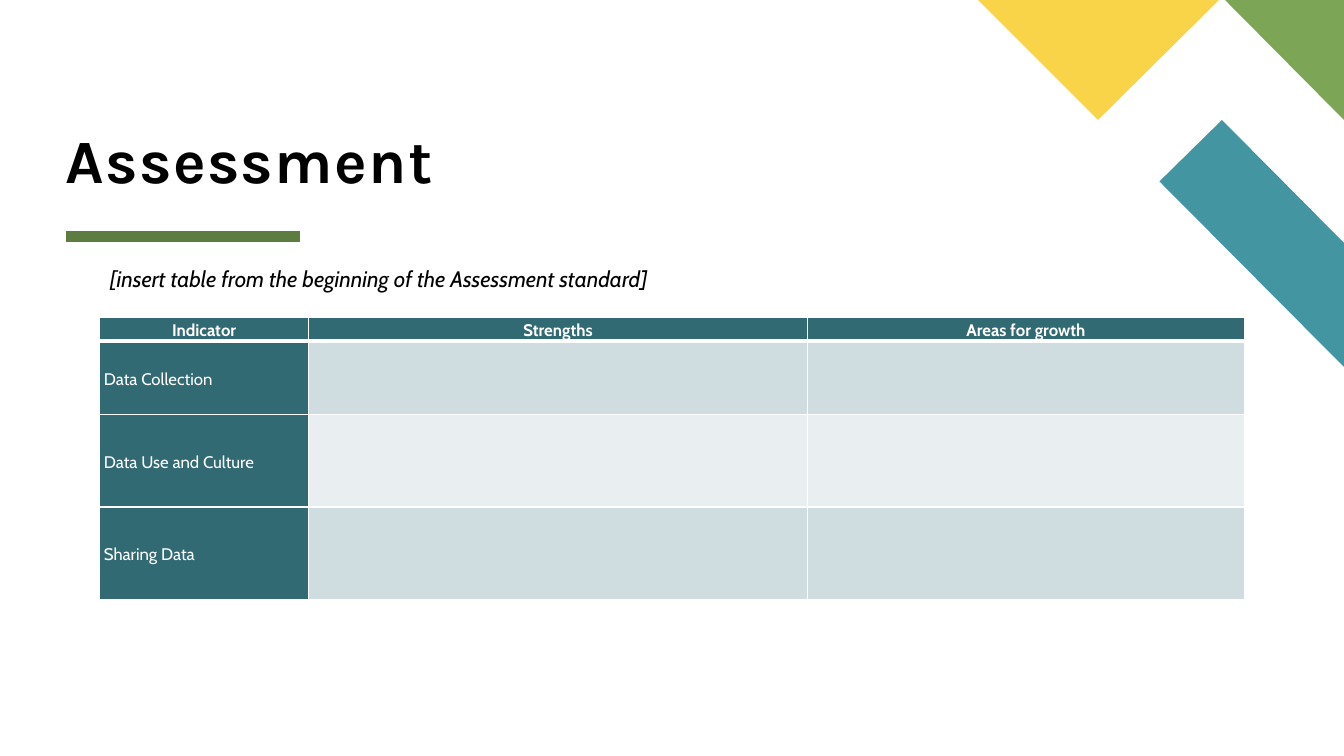
from dataclasses import dataclass

from lxml.etree import SubElement
from pptx import Presentation
from pptx.dml.color import RGBColor
from pptx.enum.shapes import MSO_CONNECTOR
from pptx.enum.text import MSO_ANCHOR, PP_ALIGN
from pptx.oxml.ns import qn
from pptx.util import Inches, Pt

COLORS = {
    "teal": "4495A2", "green": "7CA655", "yellow": "F9D448", "rule": "5D7D40",
    "head": "316A73", "odd": "CFDDE0", "even": "E9EFF0",
    "white": "FFFFFF", "black": "000000",
}


@dataclass
class Patch:
    color: str
    points: list[tuple[float, float]]


@dataclass
class Label:
    text: str
    box: tuple[float, float, float, float]
    insets: tuple[float, float, float, float]
    font: str
    size: int
    anchor: MSO_ANCHOR
    bold: bool = False
    italic: bool = False
    line: float = 1.0
    before: int = 0
    track: int = 0


PATCHES = [
    Patch("teal", [(13.33, 3.64), (13.33, 2.41), (12.12, 1.19), (11.5, 1.8)]),
    Patch("green", [(13.33, 1.19), (13.33, 0), (12.15, 0)]),
    Patch("yellow", [(9.7, 0), (10.89, 1.19), (12.09, 0)]),
]
LABELS = [
    Label("Assessment", (0.65, 0.22, 12, 1.72), (0, 0, 0, 0), "Karla", 44,
          MSO_ANCHOR.BOTTOM, bold=True, line=0.8, track=100),
    Label("[insert table from the beginning of the Assessment standard]",
          (0.65, 2.58, 12, 0.85), (0.44, 0.05, 0.1, 0.05), "Cabin", 16,
          MSO_ANCHOR.TOP, italic=True, before=6),
]
HEADS = ["Indicator", "Strengths", "Areas for growth"]
TOPICS = ["Data Collection", "Data Use and Culture", "Sharing Data"]
COLS = [2.07, 4.95, 4.33]
ROWS = [0.2, 0.73, 0.92, 0.92]


def rgb(name: str) -> RGBColor:
    return RGBColor.from_string(COLORS[name])


def draw_patch(shapes, patch: Patch) -> None:
    points = [(Inches(x), Inches(y)) for x, y in patch.points]
    form = shapes.build_freeform(*points[0])
    form.add_line_segments(points[1:], close=True)
    shape = form.convert_to_shape()
    shape.shadow.inherit = False
    shape.fill.solid()
    shape.fill.fore_color.rgb = rgb(patch.color)
    shape.line.fill.background()


def style(par, font: str, size: int, color: str, bold: bool, italic: bool = False) -> None:
    par.font.name, par.font.size = font, Pt(size)
    par.font.bold, par.font.italic = bold, italic
    par.font.color.rgb = rgb(color)


def draw_label(shapes, label: Label) -> None:
    frame = shapes.add_textbox(*map(Inches, label.box)).text_frame
    frame.word_wrap = True
    frame.vertical_anchor = label.anchor
    (frame.margin_left, frame.margin_top,
     frame.margin_right, frame.margin_bottom) = map(Inches, label.insets)
    par = frame.paragraphs[0]
    par.text = label.text
    par.line_spacing = label.line
    par.space_before = Pt(label.before)
    style(par, label.font, label.size, "black", label.bold, label.italic)
    if label.track:
        par.runs[0].font._element.set("spc", str(label.track))


def draw_rule(shapes) -> None:
    rule = shapes.add_connector(MSO_CONNECTOR.STRAIGHT, Inches(0.65), Inches(2.35),
                                Inches(2.98), Inches(2.35))
    rule.line.color.rgb = rgb("rule")
    rule.line.width = Pt(8)
    SubElement(rule._element.spPr, qn("a:effectLst"))


def set_edges(cell, row: int) -> None:
    props = cell._tc.get_or_add_tcPr()
    heavy = {0: "B", 1: "T"}.get(row)
    for side in "LRTB":
        edge = SubElement(props, qn(f"a:ln{side}"), w=str(Pt(3 if side == heavy else 1)))
        fill = SubElement(edge, qn("a:solidFill"))
        SubElement(fill, qn("a:srgbClr"), val=COLORS["white"])


def fill_cell(cell, row: int, col: int, text: str) -> None:
    set_edges(cell, row)
    cell.fill.solid()
    shade = "head" if row == 0 or col == 0 else "odd" if row % 2 else "even"
    cell.fill.fore_color.rgb = rgb(shade)
    cell.margin_left = cell.margin_right = Inches(0.04)
    cell.margin_top = cell.margin_bottom = 0
    if not text:
        return
    cell.vertical_anchor = MSO_ANCHOR.MIDDLE if row else MSO_ANCHOR.TOP
    par = cell.text_frame.paragraphs[0]
    par.text = text
    par.alignment = PP_ALIGN.LEFT if row else PP_ALIGN.CENTER
    par.line_spacing = 1.15
    par.space_before = par.space_after = Pt(2)
    style(par, "Cabin", 12, "white", row == 0)


def draw_table(shapes) -> None:
    grid = [HEADS] + [[topic, "", ""] for topic in TOPICS]
    table = shapes.add_table(len(ROWS), len(COLS), Inches(0.99), Inches(3.15),
                             Inches(sum(COLS)), Inches(sum(ROWS))).table
    table.horz_banding = False
    for col, width in zip(table.columns, COLS):
        col.width = Inches(width)
    for line, height in zip(table.rows, ROWS):
        line.height = Inches(height)
    for row, texts in enumerate(grid):
        for col, text in enumerate(texts):
            fill_cell(table.cell(row, col), row, col, text)


def main() -> None:
    deck = Presentation()
    deck.slide_width, deck.slide_height = Inches(13.33), Inches(7.5)
    slide = deck.slides.add_slide(deck.slide_layouts[6])
    shapes = slide.shapes

    # Corner shapes and title rule
    for patch in PATCHES:
        draw_patch(shapes, patch)
    draw_rule(shapes)

    # Title and prompt
    for label in LABELS:
        draw_label(shapes, label)

    # Assessment table
    draw_table(shapes)
    deck.save("out.pptx")


if __name__ == "__main__":
    main()
